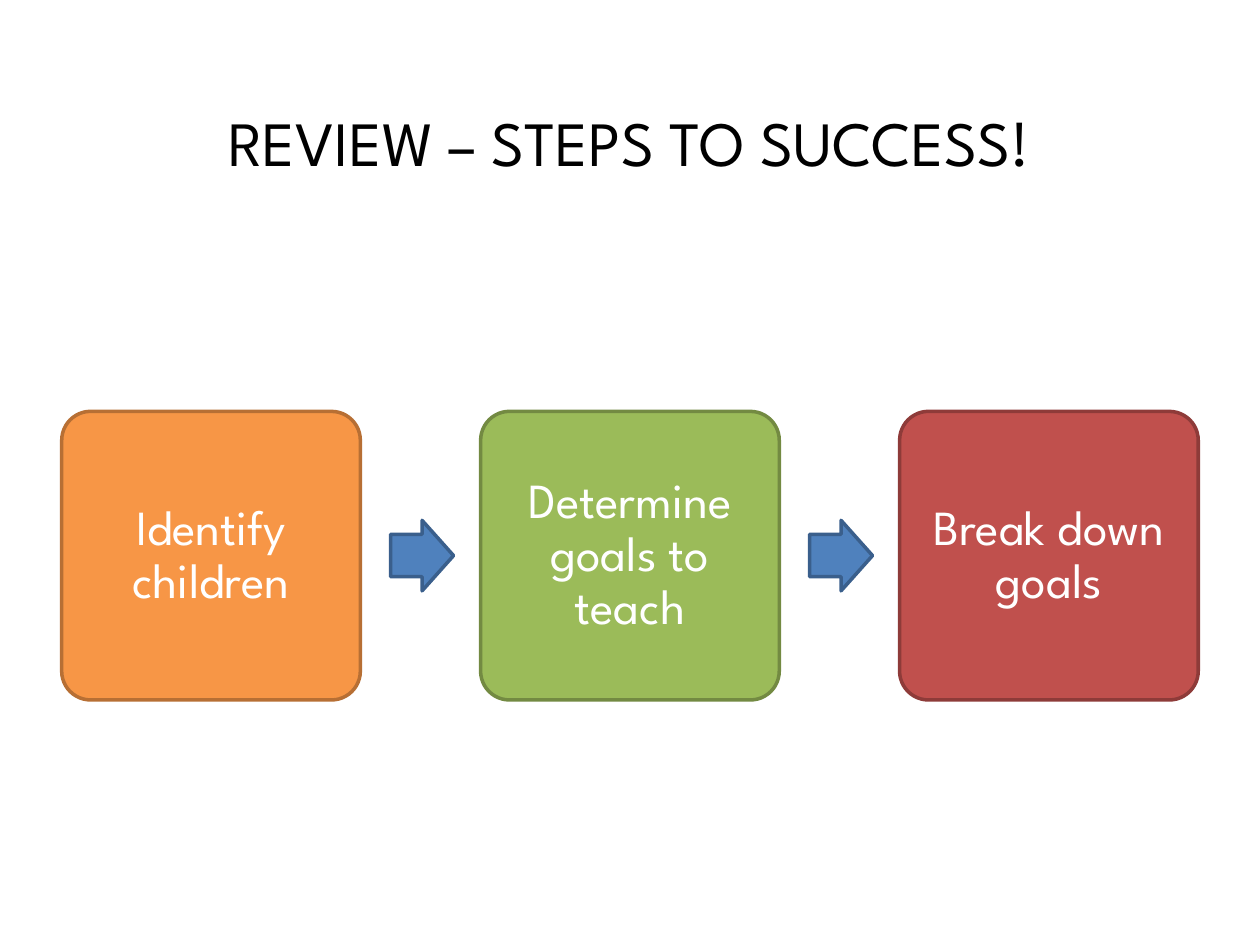
from pptx import Presentation
from pptx.dml.color import RGBColor
from pptx.enum.shapes import MSO_SHAPE
from pptx.enum.text import MSO_ANCHOR, PP_ALIGN
from pptx.util import Inches, Pt

FONT = "League Spartan"
STEPS = [
    ("Identify children", "F79646", "B76F34"),
    ("Determine goals to teach", "9BBB59", "738A42"),
    ("Break down goals", "C0504D", "8E3B39"),
]
FIRST_LEFT, LAST_LEFT = 0.49, 7.14
PITCH = (LAST_LEFT - FIRST_LEFT) / (len(STEPS) - 1)
BOX_W, BOX_H, ARROW_W, ARROW_H = 2.37, 2.29, 0.5, 0.56
MIDDLE, ARROW_GAP = 4.41, 0.24


def rgb(value):
    """Return a colour from a hex string."""
    return RGBColor.from_string(value)


def set_all(obj, values):
    """Set each attribute in a dict of format values."""
    for name, value in values.items():
        setattr(obj, name, value)


def write(shape, text, size, color, **para_format):
    """Put one centred paragraph in a shape."""
    tf = shape.text_frame
    set_all(tf, {"word_wrap": True, "vertical_anchor": MSO_ANCHOR.MIDDLE})
    p = tf.paragraphs[0]
    set_all(p, {"alignment": PP_ALIGN.CENTER, **para_format})
    r = p.add_run()
    r.text = text
    set_all(r.font, {"name": FONT, "size": Pt(size)})
    r.font.color.rgb = rgb(color)


def add_block(s, kind, left, width, height, fill, line, adjustments):
    """Add an outlined preset shape centred on the row of steps."""
    sp = s.shapes.add_shape(kind, Inches(left), Inches(MIDDLE - height / 2),
                            Inches(width), Inches(height))
    for i, value in enumerate(adjustments):
        sp.adjustments[i] = value
    sp.shadow.inherit = False
    sp.fill.solid()
    sp.fill.fore_color.rgb = rgb(fill)
    sp.line.color.rgb = rgb(line)
    sp.line.width = Pt(2)
    return sp


def add_step(s, left, text, fill, line):
    """Add a rounded step box with its label."""
    sp = add_block(s, MSO_SHAPE.ROUNDED_RECTANGLE, left, BOX_W, BOX_H, fill, line, [0.1])
    sides = ("left", "top", "right", "bottom")
    set_all(sp.text_frame, {f"margin_{side}": Inches(0.16) for side in sides})
    write(sp, text, 28, "FFFFFF", line_spacing=0.9)


def add_arrow(s, left):
    """Add an arrow that leads to the next step."""
    add_block(s, MSO_SHAPE.RIGHT_ARROW, left, ARROW_W, ARROW_H,
              "4F81BD", "3A5F8C", [0.6, 0.5])


def add_title(s, text):
    """Place and format the slide title."""
    title = s.shapes.title
    set_all(title, {"left": Inches(0.36), "top": Inches(0.5),
                    "width": Inches(9.27), "height": Inches(1.25)})
    write(title, text, 36, "000000")


def main():
    """Build and save the slide."""
    prs = Presentation()
    set_all(prs, {"slide_width": Inches(10), "slide_height": Inches(7.5)})
    s = prs.slides.add_slide(prs.slide_layouts[5])
    add_title(s, "REVIEW – STEPS TO SUCCESS!")
    for i, (text, fill, line) in enumerate(STEPS):
        left = FIRST_LEFT + i * PITCH
        add_step(s, left, text, fill, line)
        if i < len(STEPS) - 1:
            add_arrow(s, left + BOX_W + ARROW_GAP)
    prs.save("out.pptx")


if __name__ == "__main__":
    main()
